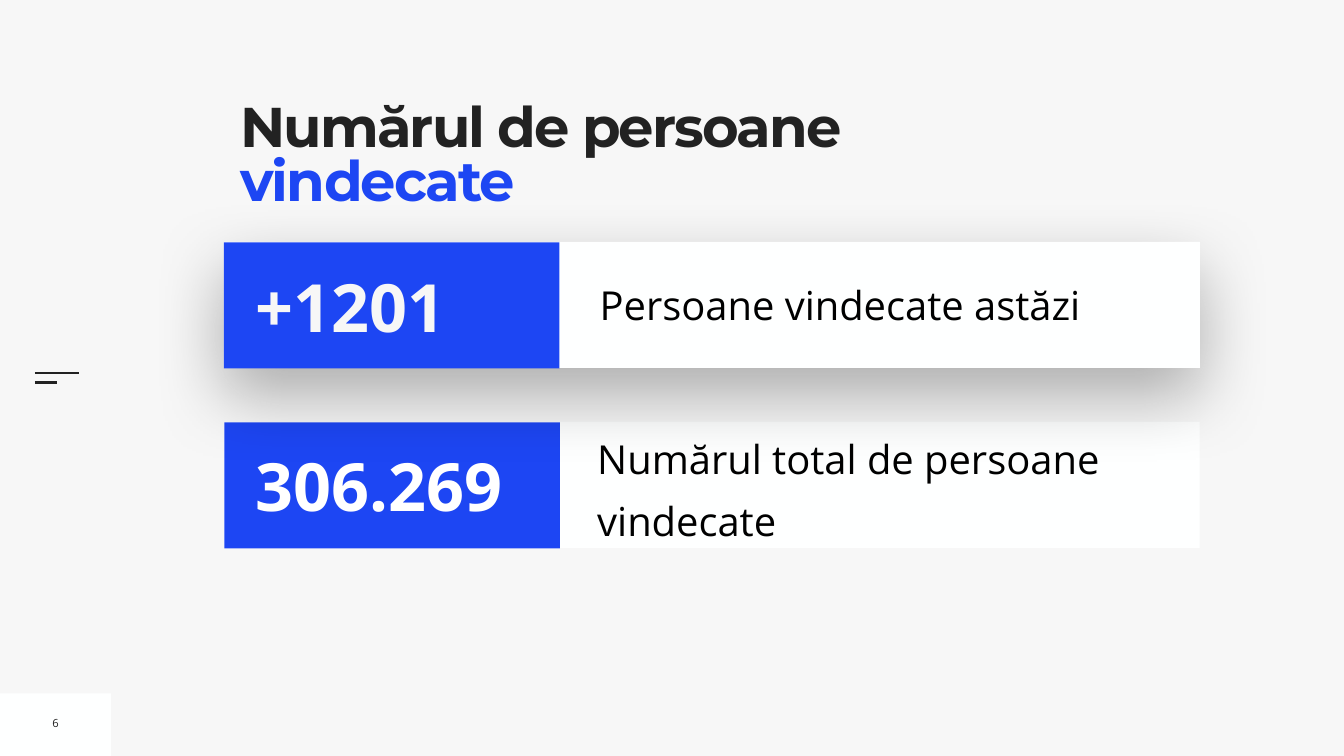
from lxml import etree
from pptx import Presentation
from pptx import util as u
from pptx.dml.color import RGBColor
from pptx.enum import shapes, text
from pptx.oxml import ns

BACKGROUND = RGBColor(0xF7, 0xF7, 0xF7)
PANEL = RGBColor(0xFE, 0xFF, 0xFF)
INK = RGBColor(0x22, 0x22, 0x22)
BLUE = RGBColor(0x1D, 0x46, 0xF3)
BLACK = RGBColor(0, 0, 0)
WHITE = RGBColor(0xFF, 0xFF, 0xFF)


def write(box, content, *, size, color, font="Open Sans", bold=False,
          align=text.PP_ALIGN.LEFT, anchor=text.MSO_ANCHOR.MIDDLE,
          inset=7.2, wrap=True, line=1.0, before=0):
    frame = box.text_frame
    frame.word_wrap = wrap
    frame.auto_size = text.MSO_AUTO_SIZE.NONE
    frame.vertical_anchor = anchor
    frame.margin_left = frame.margin_right = u.Pt(inset)
    frame.margin_top = frame.margin_bottom = u.Pt(inset)
    para = frame.paragraphs[0]
    para.alignment = align
    para.line_spacing = line
    para.space_before = u.Pt(before)
    span = para.add_run()
    span.text = content
    span.font.name = font
    span.font.size = u.Pt(size)
    span.font.bold = bold
    span.font.color.rgb = color
    return span


def add_panel(page, left, top, width, height, color):
    panel = page.shapes.add_shape(shapes.MSO_SHAPE.RECTANGLE, u.Pt(left), u.Pt(top),
                                  u.Pt(width), u.Pt(height))
    panel.shadow.inherit = False
    panel.fill.solid()
    panel.fill.fore_color.rgb = color
    panel.line.fill.background()
    return panel


deck = Presentation()
deck.slide_width, deck.slide_height = u.Pt(1920), u.Pt(1080)
page = deck.slides.add_slide(deck.slide_layouts[5])
page.background.fill.solid()
page.background.fill.fore_color.rgb = BACKGROUND

add_panel(page, 0, 990.7, 158.4, 89.3, PANEL)
for right, y in [(113, 533.5), (81.4, 546.5)]:
    dash = page.shapes.add_connector(shapes.MSO_CONNECTOR.STRAIGHT,
                                     u.Pt(49.7), u.Pt(y), u.Pt(right), u.Pt(y))
    dash.line.color.rgb = INK
    dash.line.width = u.Pt(3)
    etree.SubElement(dash._element.spPr, ns.qn("a:effectLst"))

title = page.shapes.title
title.left, title.top, title.width, title.height = map(u.Pt, (343.4, 149, 936.7, 196.6))
title.fill.solid()
title.fill.fore_color.rgb = BACKGROUND
for content, color in [("Numărul de persoane ", INK), ("vindecate", BLUE)]:
    span = write(title, content, size=80, color=color, font="Montserrat", bold=True,
                 anchor=text.MSO_ANCHOR.TOP, inset=0, line=0.8)
    span.font._element.set("spc", "-270")

number = page.shapes.add_textbox(u.Pt(67), u.Pt(1014.5), u.Pt(24.5), u.Pt(36.7))
write(number, "6", size=16, color=INK, align=text.PP_ALIGN.CENTER, wrap=False)

cards = [
    (320.4, 602.6, 1393.2, "306.269", WHITE, "Numărul total de persoane vindecate",
     (853.2, 604, 860.4, 170), {"inset": 0, "line": 1.3, "before": 20}, False),
    (319.7, 345.6, 1394.6, "+1201", BACKGROUND, "Persoane vindecate astăzi",
     (849.6, 393.8, 846.7, 83.5), {}, True),
]
for left, top, width, figure, figure_color, label, label_area, style, raised in cards:
    card = add_panel(page, left, top, width, 180, PANEL)
    if raised:
        effects = card._element.spPr.find(ns.qn("a:effectLst"))
        shadow = etree.SubElement(effects, ns.qn("a:outerShdw"), blurRad=str(u.Pt(100)),
                                  dist=str(u.Pt(40)), dir="5400000", rotWithShape="0")
        tint = etree.SubElement(shadow, ns.qn("a:srgbClr"), val="000000")
        etree.SubElement(tint, ns.qn("a:alpha"), val="30000")
    label_box = page.shapes.add_textbox(*map(u.Pt, label_area))
    write(label_box, label, size=57, color=BLACK, **style)
    add_panel(page, left, top + 0.7, 479.5, 180, BLUE)
    figure_box = page.shapes.add_textbox(u.Pt(left + 38.2), u.Pt(top + 26),
                                         u.Pt(434), u.Pt(129.6))
    write(figure_box, figure, size=95, color=figure_color, bold=True)

deck.save("out.pptx")
